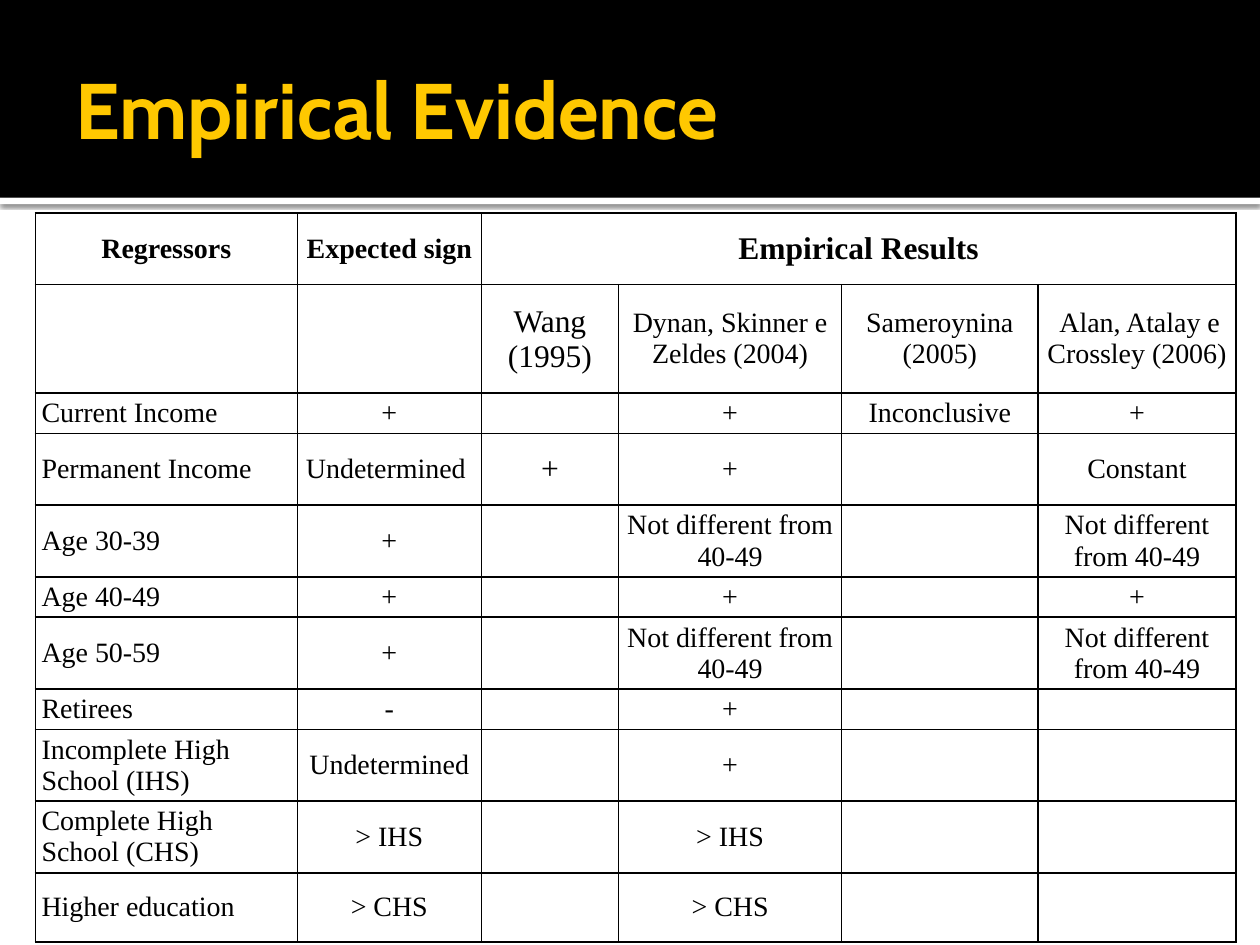
"""Build the slide that compares empirical evidence on saving regressors."""
from lxml.etree import SubElement
from pptx import Presentation
from pptx.dml.color import RGBColor
from pptx.enum.shapes import MSO_SHAPE
from pptx.enum.text import MSO_ANCHOR, PP_ALIGN
from pptx.oxml.ns import qn
from pptx.util import Inches, Pt

BLACK = RGBColor(0x00, 0x00, 0x00)
WHITE = RGBColor(0xFF, 0xFF, 0xFF)
GOLD = RGBColor(0xFF, 0xC8, 0x00)

WIDTH, HEIGHT = Inches(10), Inches(7.5)
BANNER_HEIGHT = Inches(1.57)
COLUMN_WIDTHS = (2.08, 1.46, 1.09, 1.77, 1.56, 1.57)
SHORT_ROW, TALL_ROW, STUDY_ROW, LAST_ROW = 0.32, 0.57, 0.86, 0.55
SIMILAR = "Not different from 40-49"

ROWS = (
    (TALL_ROW, ("Regressors", "Expected sign", "Empirical Results", "", "", "")),
    (STUDY_ROW, ("", "", "Wang (1995)", "Dynan, Skinner e Zeldes (2004)",
                 "Sameroynina (2005)", " Alan, Atalay e Crossley (2006)")),
    (SHORT_ROW, ("Current Income", "+", "", "+", "Inconclusive", "+")),
    (TALL_ROW, ("Permanent Income", "Undetermined ", "+", "+", "", "Constant")),
    (TALL_ROW, ("Age 30-39", "+", "", SIMILAR, "", SIMILAR)),
    (SHORT_ROW, ("Age 40-49", "+", "", "+", "", "+")),
    (TALL_ROW, ("Age 50-59", "+", "", SIMILAR, "", SIMILAR)),
    (SHORT_ROW, ("Retirees", "-", "", "+", "", "")),
    (TALL_ROW, ("Incomplete High School (IHS)", "Undetermined", "", "+", "", "")),
    (TALL_ROW, ("Complete High School (CHS)", "> IHS", "", "> IHS", "", "")),
    (LAST_ROW, ("Higher education", "> CHS", "", "> CHS", "", "")),
)


def add_band(slide, top, height, color):
    """Add a full-width band without outline or shadow."""
    shape = slide.shapes.add_shape(MSO_SHAPE.RECTANGLE, 0, top, WIDTH, height)
    shape.shadow.inherit = False
    shape.fill.solid()
    shape.fill.fore_color.rgb = color
    shape.line.fill.background()
    return shape


def cast_shadow(shape):
    """Give a shape a soft shadow that falls downwards."""
    effects = shape.element.spPr.find(qn("a:effectLst"))
    shadow = SubElement(effects, qn("a:outerShdw"), blurRad=str(Pt(2.5)),
                        dist=str(Pt(0.8)), dir="5400000", rotWithShape="0")
    color = SubElement(shadow, qn("a:srgbClr"), val=str(BLACK))
    SubElement(color, qn("a:alpha"), val="60000")


def add_text(paragraph, text, font_name, size, color, bold):
    """Add one formatted run to a paragraph."""
    run = paragraph.add_run()
    run.text = text
    run.font.name = font_name
    run.font.size = Pt(size)
    run.font.bold = bold
    run.font.color.rgb = color


def add_title(slide, text):
    """Add the title over the banner."""
    box = slide.shapes.add_textbox(Inches(0.5), Inches(0.17), Inches(9), Inches(1.37))
    frame = box.text_frame
    frame.word_wrap = True
    frame.vertical_anchor = MSO_ANCHOR.MIDDLE
    frame.margin_right = Inches(0.05)
    add_text(frame.paragraphs[0], text, "Cabin", 45, GOLD, True)


def add_borders(cell):
    """Draw a thin black line on every side of a cell."""
    properties = cell._tc.get_or_add_tcPr()
    for side in ("a:lnL", "a:lnR", "a:lnT", "a:lnB"):
        line = SubElement(properties, qn(side), w=str(Pt(1)))
        fill = SubElement(line, qn("a:solidFill"))
        SubElement(fill, qn("a:srgbClr"), val=str(BLACK))


def fill_cell(cell, text, row, column):
    """Format a cell and write its text."""
    add_borders(cell)
    cell.fill.background()
    cell.vertical_anchor = MSO_ANCHOR.MIDDLE
    cell.margin_left = cell.margin_right = Inches(0.05)
    cell.margin_top = cell.margin_bottom = 0
    if text:
        paragraph = cell.text_frame.paragraphs[0]
        is_label = column == 0 and row > 0
        paragraph.alignment = PP_ALIGN.LEFT if is_label else PP_ALIGN.CENTER
        size = 18 if column == 2 else 16
        add_text(paragraph, text, "Times New Roman", size, BLACK, row == 0)


def add_results_table(slide):
    """Add the table of expected signs and published results."""
    heights = [height for height, _ in ROWS]
    table = slide.shapes.add_table(
        len(ROWS), len(COLUMN_WIDTHS), Inches(0.28), Inches(1.69),
        Inches(sum(COLUMN_WIDTHS)), Inches(sum(heights))).table
    table.first_row = table.horz_banding = False
    for column, width in zip(table.columns, COLUMN_WIDTHS):
        column.width = Inches(width)
    for row_index, (height, texts) in enumerate(ROWS):
        table.rows[row_index].height = Inches(height)
        for column_index, text in enumerate(texts):
            cell = table.cell(row_index, column_index)
            fill_cell(cell, text, row_index, column_index)
    table.cell(0, 2).merge(table.cell(0, len(COLUMN_WIDTHS) - 1))


def main():
    """Build and save the presentation."""
    presentation = Presentation()
    presentation.slide_width, presentation.slide_height = WIDTH, HEIGHT
    slide = presentation.slides.add_slide(presentation.slide_layouts[6])
    slide.background.fill.solid()
    slide.background.fill.fore_color.rgb = WHITE
    cast_shadow(add_band(slide, BANNER_HEIGHT, Inches(0.05), WHITE))
    add_band(slide, 0, BANNER_HEIGHT, BLACK)
    add_title(slide, "Empirical Evidence")
    add_results_table(slide)
    presentation.save("out.pptx")


if __name__ == "__main__":
    main()
